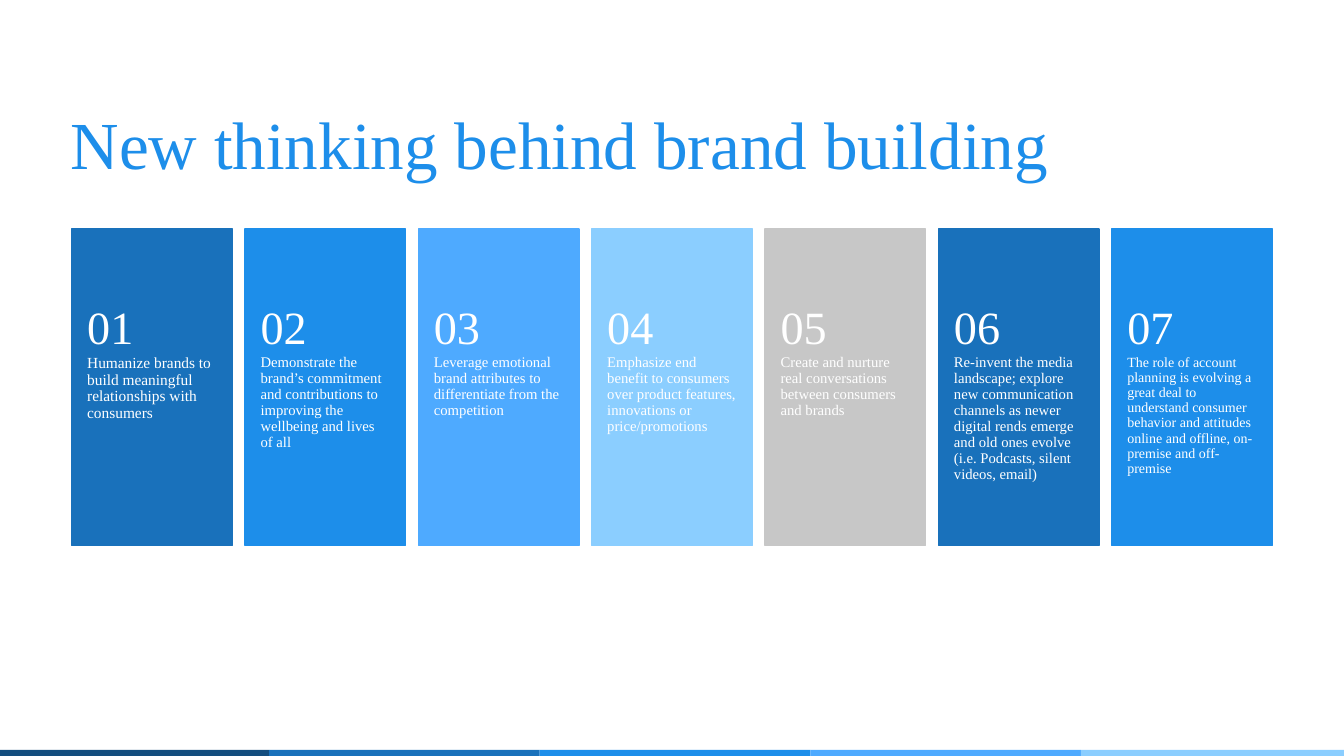
from pptx import Presentation
from pptx.dml.color import RGBColor
from pptx.enum.shapes import MSO_SHAPE
from pptx.enum.text import MSO_ANCHOR, PP_ALIGN
from pptx.util import Inches, Pt

RECT = MSO_SHAPE.RECTANGLE
TOP, MIDDLE = MSO_ANCHOR.TOP, MSO_ANCHOR.MIDDLE
LEFT = PP_ALIGN.LEFT

COLORS = {
    "navy": "134D7E",
    "deep": "1971BB",
    "blue": "1D8EEA",
    "sky": "4EAAFF",
    "pale": "8BCEFF",
    "gray": "C7C7C7",
    "white": "FFFFFF",
}
STRIP = ["navy", "deep", "blue", "sky", "pale"]
CARDS = [
    ("deep", 22, "Humanize brands to build meaningful relationships with consumers"),
    ("blue", 21, "Demonstrate the brand’s commitment and contributions to "
                 "improving the wellbeing and lives of all"),
    ("sky", 21, "Leverage emotional brand attributes to differentiate from the competition"),
    ("pale", 21, "Emphasize end benefit to consumers over product features, "
                 "innovations or price/promotions"),
    ("gray", 21, "Create and nurture real conversations between consumers and brands"),
    ("deep", 21, "Re-invent the media landscape; explore new communication channels "
                 "as newer digital rends emerge and old ones evolve "
                 "(i.e. Podcasts, silent videos, email)"),
    ("blue", 20, "The role of account planning is evolving a great deal to understand "
                 "consumer behavior and attitudes online and offline, "
                 "on-premise and off-premise"),
]
CARD_X, CARD_Y, CARD_W, CARD_H, STEP = 1.42, 4.54, 3.19, 6.28, 3.44


def rgb(name):
    return RGBColor.from_string(COLORS[name])


class Deck:
    """Holds the style and the current slide."""

    font = "Times New Roman"

    def __init__(self, slide):
        self.slide = slide

    def label(self, shape, text, size, color, insets, anchor, spacing=None):
        """Fill a shape with one formatted run; insets are left, top, right, bottom."""
        frame = shape.text_frame
        frame.word_wrap = True
        frame.vertical_anchor = anchor
        (frame.margin_left, frame.margin_top,
         frame.margin_right, frame.margin_bottom) = map(Inches, insets)
        para = frame.paragraphs[0]
        para.alignment = LEFT
        if spacing:
            para.line_spacing = spacing
        run = para.add_run()
        run.text = text
        run.font.name = self.font
        run.font.size = Pt(size)
        run.font.color.rgb = rgb(color)

    def title(self, text, box, size):
        shape = self.slide.shapes.title
        shape.left, shape.top, shape.width, shape.height = map(Inches, box)
        self.label(shape, text, size, "blue", (0.24, 0.12, 0.24, 0.12), MIDDLE)

    def block(self, box, color, line=None):
        shape = self.slide.shapes.add_shape(RECT, *map(Inches, box))
        shape.shadow.inherit = False
        shape.fill.solid()
        shape.fill.fore_color.rgb = rgb(color)
        if line:
            shape.line.color.rgb = rgb(color)
            shape.line.width = Pt(line)
        else:
            shape.line.fill.background()

    def text(self, text, box, size, insets, anchor):
        shape = self.slide.shapes.add_textbox(*map(Inches, box))
        self.label(shape, text, size, "white", insets, anchor, 0.9)

    def card(self, index, color, size, text):
        x = CARD_X + index * STEP
        self.block((x, CARD_Y, CARD_W, CARD_H), color, 2)
        self.text(text, (x, 7.05, CARD_W, 3.77), size, (0.31, 0, 0.31, 0.36), TOP)
        self.text(f"{index + 1:02}", (x, 5.77, CARD_W, 1.53), 66,
                  (0.31, 0.18, 0.31, 0.18), MIDDLE)


def main():
    prs = Presentation()
    prs.slide_width, prs.slide_height = Inches(26.67), Inches(15)
    deck = Deck(prs.slides.add_slide(prs.slide_layouts[5]))
    for i, color in enumerate(STRIP):
        deck.block((-0.03 + i * 5.37, 14.88, 5.37, 0.2), color)
    deck.title("New thinking behind brand building", (1.16, 1.16, 25.51, 3.33), 96)
    for i, card in enumerate(CARDS):
        deck.card(i, *card)
    prs.save("out.pptx")


if __name__ == "__main__":
    main()
